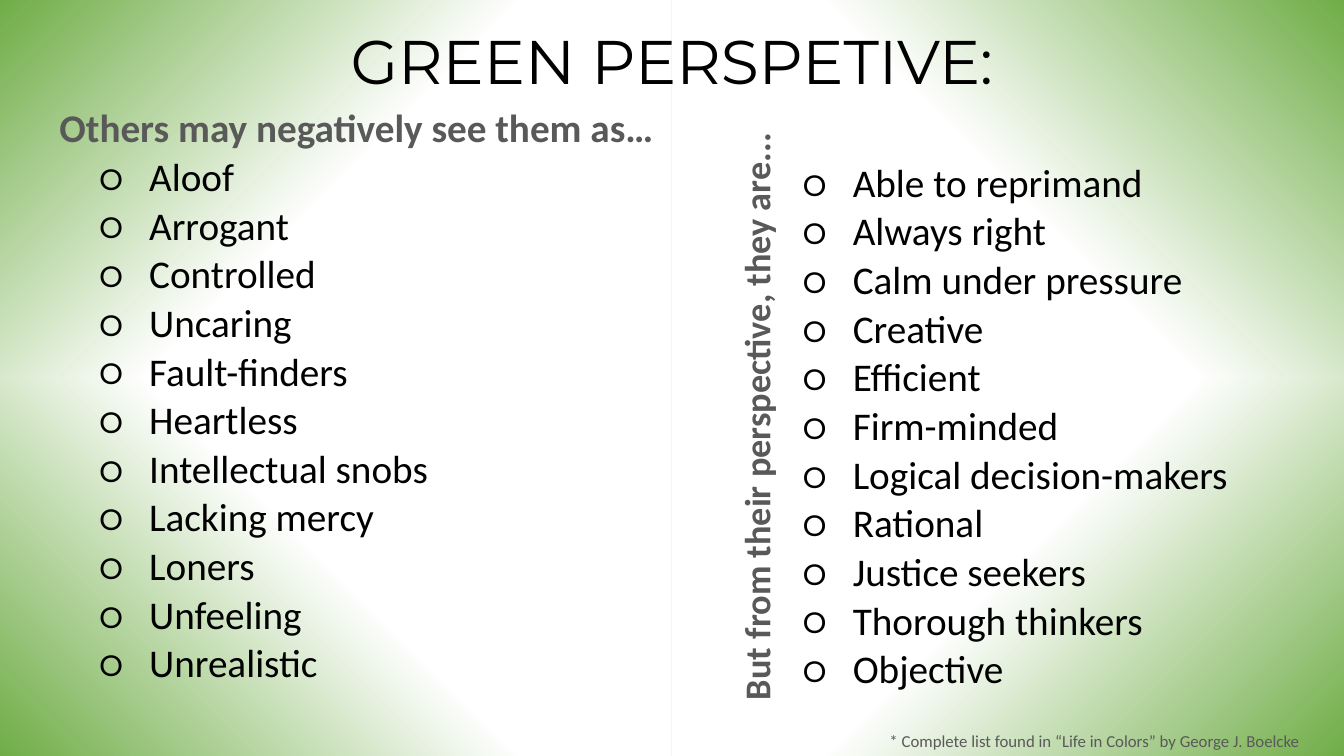
import pptx
import pptx.dml.color
import pptx.enum.shapes
import pptx.enum.text
import pptx.oxml
import pptx.oxml.ns
import pptx.util

COLORS = {"green": "70AD47", "white": "FFFFFF", "black": "000000", "grey": "595959"}
COLUMNS, ROWS = 80, 45

NEGATIVE_VIEWS = [
    "Aloof", "Arrogant", "Controlled", "Uncaring", "Fault-finders", "Heartless",
    "Intellectual snobs", "Lacking mercy", "Loners", "Unfeeling", "Unrealistic",
]
OWN_VIEWS = [
    "Able to reprimand", "Always right", "Calm under pressure", "Creative",
    "Efficient", "Firm-minded", "Logical decision-makers", "Rational",
    "Justice seekers", "Thorough thinkers", "Objective",
]


def color(name):
    return pptx.dml.color.RGBColor.from_string(COLORS[name])


class PerspectiveSlide:
    heading_font, text_font = "Montserrat", "Calibri"
    list_size = 28

    def __init__(self, deck):
        self.cell_width = deck.slide_width / COLUMNS
        self.cell_height = deck.slide_height / ROWS
        self.slide = deck.slides.add_slide(deck.slide_layouts[3])
        self.shapes = self.slide.shapes
        backdrop = self.slide.background.fill
        backdrop.solid()
        backdrop.fore_color.rgb = color("black")

    def area(self, column, row, columns, rows):
        """Turn a grid area into left, top, width and height."""
        return (round(column * self.cell_width), round(row * self.cell_height),
                round(columns * self.cell_width), round(rows * self.cell_height))

    def place(self, shape, grid_area):
        shape.left, shape.top, shape.width, shape.height = self.area(*grid_area)

    def corner_glow(self):
        """Fill each quarter with a gradient running inward from its corner."""
        glow = self.shapes.add_group_shape()
        half_columns, half_rows = COLUMNS / 2, ROWS / 2
        for column, row, angle in [(0, 0, 315), (1, 0, 225), (0, 1, 45), (1, 1, 135)]:
            quarter = glow.shapes.add_shape(
                pptx.enum.shapes.MSO_SHAPE.RECTANGLE,
                *self.area(column * half_columns, row * half_rows, half_columns, half_rows))
            quarter.shadow.inherit = False
            quarter.line.fill.background()
            quarter.fill.gradient()
            quarter.fill.gradient_angle = angle
            stops = zip(quarter.fill.gradient_stops, ["green", "white"], [0, 0.5])
            for stop, shade, position in stops:
                stop.color.rgb = color(shade)
                stop.position = position
        self.shapes._spTree.insert(2, glow._element)

    def frame(self, shape, anchor="TOP"):
        frame = shape.text_frame
        frame.word_wrap = True
        frame.auto_size = pptx.enum.text.MSO_AUTO_SIZE.NONE
        frame.vertical_anchor = getattr(pptx.enum.text.MSO_ANCHOR, anchor)
        return frame

    def add_words(self, paragraph, text, size, shade, font=None, bold=False,
                  align="LEFT", leading=0.9, before=0):
        paragraph.alignment = getattr(pptx.enum.text.PP_ALIGN, align)
        paragraph.line_spacing = leading
        paragraph.space_before = pptx.util.Pt(before)
        run = paragraph.add_run()
        run.text = text
        run.font.size = pptx.util.Pt(size)
        run.font.name = font or self.text_font
        run.font.bold = bold
        run.font.color.rgb = color(shade)

    def bullet(self, paragraph, mark=None):
        """Set a hanging bullet, or none at all when there is no mark."""
        properties = paragraph._p.get_or_add_pPr()
        margin, hang = (0.89, -0.5) if mark else (0, 0)
        properties.set("marL", str(pptx.util.Inches(margin)))
        properties.set("indent", str(pptx.util.Inches(hang)))
        namespace = pptx.oxml.ns.nsdecls("a")
        marks = [f'<a:buFont {namespace} typeface="{self.heading_font}"/>',
                 f'<a:buChar {namespace} char="{mark}"/>'] if mark else [f"<a:buNone {namespace}/>"]
        for xml in marks:
            properties.append(pptx.oxml.parse_xml(xml))

    def title(self, text, grid_area):
        heading = self.shapes.title
        self.place(heading, grid_area)
        self.add_words(self.frame(heading, "MIDDLE").paragraphs[0], text, 44, "black",
                       self.heading_font, align="CENTER")

    def trait_list(self, index, traits, grid_area, lead=None):
        body = self.slide.placeholders[index]
        self.place(body, grid_area)
        frame = self.frame(body)
        lines = ([lead] if lead else []) + traits
        for number, line in enumerate(lines):
            paragraph = frame.add_paragraph() if number else frame.paragraphs[0]
            paragraph.level = 2
            is_lead = line == lead
            self.bullet(paragraph, None if is_lead else "o")
            self.add_words(paragraph, line, self.list_size, "grey" if is_lead else "black",
                           bold=is_lead, before=4.5 if number else 0)

    def label(self, text, grid_area, size, rotation=0, **style):
        box = self.shapes.add_textbox(*self.area(*grid_area))
        box.rotation = rotation
        self.add_words(self.frame(box).paragraphs[0], text, size, "grey", **style)


def main():
    deck = pptx.Presentation()
    deck.slide_width = pptx.util.Inches(13.33)
    deck.slide_height = pptx.util.Inches(7.5)
    green = PerspectiveSlide(deck)
    green.corner_glow()
    green.title("GREEN PERSPETIVE:", (5.5, 1.25, 69, 5.2))
    green.trait_list(1, NEGATIVE_VIEWS, (2.94, 6.18, 37.6, 37.7),
                     lead="Others may negatively see them as…")
    green.trait_list(2, OWN_VIEWS, (44.82, 9.42, 32, 34.4))
    green.label("But from their perspective, they are...", (26.7, 21.66, 37.6, 3.6),
                25.9, rotation=270, bold=True)
    green.label("* Complete list found in “Life in Colors” by George J. Boelcke",
                (50.34, 43.2, 29.64, 1.8), 12, align="CENTER", leading=1.0)
    for placeholder in list(green.slide.placeholders):
        if not placeholder.text_frame.text:
            placeholder._element.getparent().remove(placeholder._element)
    deck.save("out.pptx")


if __name__ == "__main__":
    main()
